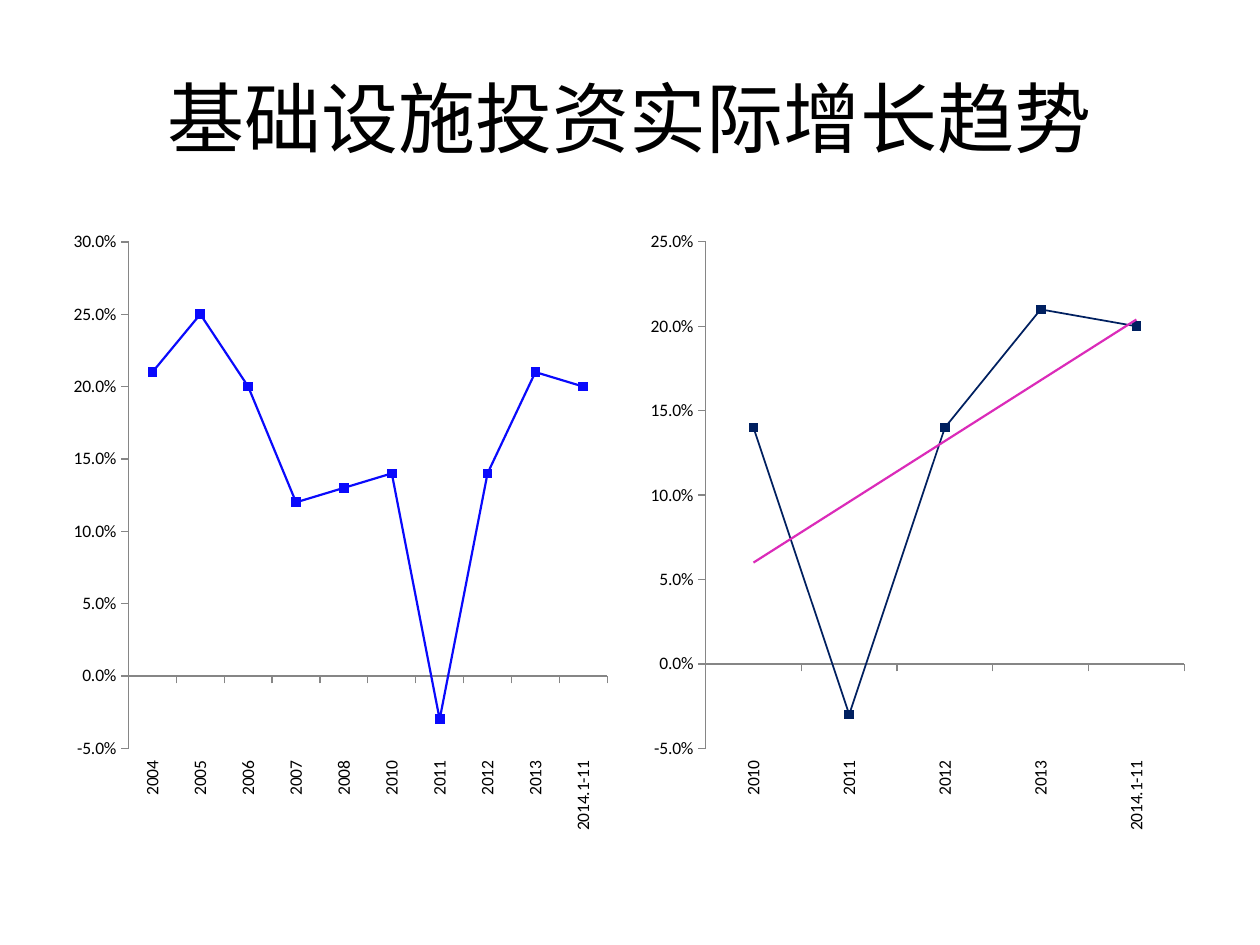
from lxml import etree
from pptx import Presentation
from pptx.chart.data import CategoryChartData
from pptx.dml.color import RGBColor
from pptx.enum.chart import XL_CHART_TYPE, XL_MARKER_STYLE, XL_TICK_LABEL_POSITION, XL_TICK_MARK
from pptx.enum.text import MSO_ANCHOR, PP_ALIGN
from pptx.oxml import parse_xml
from pptx.oxml.ns import nsdecls, qn
from pptx.util import Inches, Pt

LINE_MARKERS = XL_CHART_TYPE.LINE_MARKERS
SQUARE = XL_MARKER_STYLE.SQUARE
LOW = XL_TICK_LABEL_POSITION.LOW
OUTSIDE, NO_TICK = XL_TICK_MARK.OUTSIDE, XL_TICK_MARK.NONE
MIDDLE, CENTER = MSO_ANCHOR.MIDDLE, PP_ALIGN.CENTER

FONT = "Calibri"
BLACK, GRAY = "000000", "868686"
BLUE, NAVY, PINK = "0A0AFC", "002060", "DB2BB9"

# Chart size and the plot inside it, in inches
CHART_WIDTH, CHART_HEIGHT = 4.42, 4.95
PLOT_AREA = {"x": 0.52 / CHART_WIDTH, "y": 0.17 / CHART_HEIGHT,
             "w": 3.8 / CHART_WIDTH, "h": 4.02 / CHART_HEIGHT}

YEARS = ["2004", "2005", "2006", "2007", "2008", "2010", "2011", "2012", "2013", "2014.1-11"]
GROWTH = [0.21, 0.25, 0.2, 0.12, 0.13, 0.14, -0.03, 0.14, 0.21, 0.2]
RECENT = 5  # number of latest periods in the right chart


def color(hex_string):
    return RGBColor.from_string(hex_string)


def write_text(frame, text, size=18, font=FONT, fill=BLACK, align=CENTER):
    para = frame.paragraphs[0]
    para.alignment = align
    span = para.add_run()
    span.text = text
    span.font.size = Pt(size)
    span.font.name = font
    span.font.color.rgb = color(fill)


def style_line(line, hex_string, width):
    line.color.rgb = color(hex_string)
    line.width = Pt(width)


class SlideBuilder:
    def __init__(self, deck):
        self.page = deck.slides.add_slide(deck.slide_layouts[6])

    def title(self, text, left, top, width, height):
        box = self.page.shapes.add_textbox(Inches(left), Inches(top), Inches(width), Inches(height))
        box.text_frame.word_wrap = True
        box.text_frame.vertical_anchor = MIDDLE
        write_text(box.text_frame, text, size=44)

    def line_chart(self, years, values, left, line_color, line_width, maximum, trend=None):
        data = CategoryChartData(number_format="0.0%")
        data.categories = years
        data.add_series("Series 1", values)
        chart = self.page.shapes.add_chart(
            LINE_MARKERS, Inches(left), Inches(1.75),
            Inches(CHART_WIDTH), Inches(CHART_HEIGHT), data).chart
        chart.has_title = chart.has_legend = False
        chart.font.name = FONT
        chart.font.size = Pt(10)
        chart.font.color.rgb = color(BLACK)
        self.axes(chart, maximum)
        self.plot_layout(chart)

        # Line and markers
        chart.plots[0].vary_by_categories = False
        series = chart.plots[0].series[0]
        series.smooth = False
        style_line(series.format.line, line_color, line_width)
        series.marker.style = SQUARE
        series.marker.size = 5
        series.marker.format.fill.solid()
        series.marker.format.fill.fore_color.rgb = color(line_color)
        series.marker.format.line.color.rgb = color(line_color)
        if trend:
            self.trend_line(series, trend)

    def axes(self, chart, maximum):
        years, rates = chart.category_axis, chart.value_axis
        for axis in (years, rates):
            axis.has_major_gridlines = False
            axis.major_tick_mark = OUTSIDE
            axis.minor_tick_mark = NO_TICK
            style_line(axis.format.line, GRAY, 0.75)
        years.tick_label_position = LOW
        years.tick_labels.font.size = Pt(10)
        body = years._element.find(qn("c:txPr")).find(qn("a:bodyPr"))
        body.set("rot", "-5400000")
        body.set("vert", "horz")
        rates.minimum_scale, rates.maximum_scale, rates.major_unit = -0.05, maximum, 0.05
        rates.tick_labels.number_format = "0.0%"
        rates.tick_labels.number_format_is_linked = False

    def plot_layout(self, chart):
        plot_area = chart._chartSpace.chart.plotArea
        for old in plot_area.findall(qn("c:layout")):
            plot_area.remove(old)
        layout = etree.Element(qn("c:layout"))
        manual = etree.SubElement(layout, qn("c:manualLayout"))
        settings = {"layoutTarget": "inner", "xMode": "edge", "yMode": "edge", **PLOT_AREA}
        for name, value in settings.items():
            etree.SubElement(manual, qn(f"c:{name}")).set("val", str(value))
        plot_area.insert(0, layout)

    def trend_line(self, series, hex_string):
        trend = parse_xml(
            f'<c:trendline {nsdecls("c", "a")}><c:spPr><a:ln w="{Pt(1.25)}"><a:solidFill>'
            f'<a:srgbClr val="{hex_string}"/></a:solidFill></a:ln></c:spPr>'
            '<c:trendlineType val="linear"/><c:dispRSqr val="0"/><c:dispEq val="0"/></c:trendline>')
        series._element.find(qn("c:cat")).addprevious(trend)


def main():
    deck = Presentation()
    deck.slide_width, deck.slide_height = Inches(10), Inches(7.5)
    slide = SlideBuilder(deck)

    # Title
    slide.title("基础设施投资实际增长趋势", 0.5, 0.3, 9, 1.25)

    # Whole period on the left, latest years with their trend on the right
    slide.line_chart(YEARS, GROWTH, 0.5, BLUE, 1.25, maximum=0.3)
    slide.line_chart(YEARS[-RECENT:], GROWTH[-RECENT:], 5.08, NAVY, 1, maximum=0.25, trend=PINK)

    deck.save("out.pptx")


if __name__ == "__main__":
    main()
